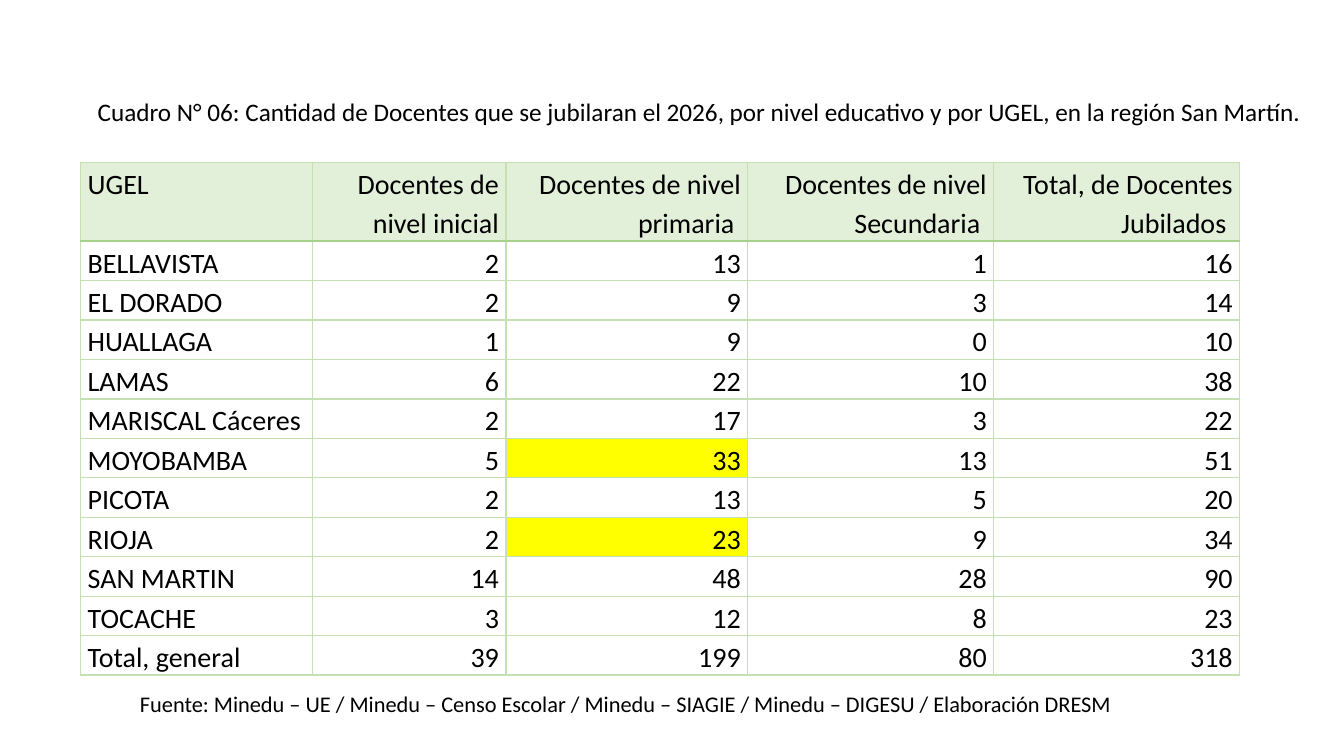
from lxml.etree import SubElement
from pptx import Presentation
from pptx.dml.color import RGBColor
from pptx.enum.text import MSO_ANCHOR, PP_ALIGN
from pptx.oxml.ns import qn
from pptx.util import Inches, Pt

HEADERS = ["UGEL", "Docentes de nivel inicial", "Docentes de nivel primaria ",
           "Docentes de nivel Secundaria ", "Total, de Docentes Jubilados "]
TEACHERS = [
    ("BELLAVISTA", 2, 13, 1, 16),
    ("EL DORADO", 2, 9, 3, 14),
    ("HUALLAGA", 1, 9, 0, 10),
    ("LAMAS", 6, 22, 10, 38),
    ("MARISCAL Cáceres", 2, 17, 3, 22),
    ("MOYOBAMBA", 5, 33, 13, 51),
    ("PICOTA", 2, 13, 5, 20),
    ("RIOJA", 2, 23, 9, 34),
    ("SAN MARTIN", 14, 48, 28, 90),
    ("TOCACHE", 3, 12, 8, 23),
    ("Total, general", 39, 199, 80, 318),
]
COLUMN_WIDTHS = [17.25, 14.4, 18, 18.3, 18.3]
HIGHLIGHTED = {("MOYOBAMBA", 2), ("RIOJA", 2)}


def rgb(value):
    return RGBColor.from_string(value)


class SlideBuilder:
    """Draws styled elements on a slide divided into 100 columns and 100 rows."""

    font = "Calibri"
    ink = "000000"
    border = "C5E0B3"
    header_rule = "A8D08D"
    header_fill = "E2EFD9"
    highlight = "FFFF00"

    def __init__(self, prs):
        self.prs = prs
        self.s = prs.slides.add_slide(prs.slide_layouts[6])

    def col(self, n):
        return round(self.prs.slide_width * n / 100)

    def row(self, n):
        return round(self.prs.slide_height * n / 100)

    def set_text(self, tf, text, size):
        tf.text = text
        p = tf.paragraphs[0]
        for r in p.runs:
            r.font.name = self.font
            r.font.size = Pt(size)
            r.font.bold = False
            r.font.color.rgb = rgb(self.ink)
        return p

    def caption(self, x, y, w, h, text, size, anchor=MSO_ANCHOR.TOP, wrap=True):
        sp = self.s.shapes.add_textbox(self.col(x), self.row(y), self.col(w), self.row(h))
        tf = sp.text_frame
        tf.word_wrap = wrap
        tf.vertical_anchor = anchor
        p = self.set_text(tf, text, size)
        p._p.get_or_add_pPr().set("indent", str(Inches(0.49)))

    def borders(self, cell, top, bottom):
        tc_pr = cell._tc.get_or_add_tcPr()
        side = (self.border, 1)
        edges = [("a:lnL", side), ("a:lnR", side), ("a:lnT", top), ("a:lnB", bottom)]
        for i, (tag, (color, width)) in enumerate(edges):
            ln = SubElement(tc_pr, qn(tag), w=str(Pt(width)))
            fill = SubElement(ln, qn("a:solidFill"))
            SubElement(fill, qn("a:srgbClr"), val=color)
            tc_pr.insert(i, ln)

    def cell(self, cell, text, is_header, is_label, fill):
        cell.margin_left = cell.margin_right = Inches(0.07)
        cell.margin_top = cell.margin_bottom = 0
        p = self.set_text(cell.text_frame, text, 20)
        p.line_spacing = 1.15
        p.alignment = PP_ALIGN.LEFT if is_label else PP_ALIGN.RIGHT
        if is_header:
            cell.vertical_anchor = MSO_ANCHOR.TOP
        else:
            cell.vertical_anchor = MSO_ANCHOR.MIDDLE if is_label else MSO_ANCHOR.BOTTOM
        if fill:
            cell.fill.solid()
            cell.fill.fore_color.rgb = rgb(fill)
        else:
            cell.fill.background()

    def table(self, x, y, widths, row_height, headers, records, highlighted):
        rows = [headers, *records]
        height = row_height * (len(rows) + 1)
        frame = self.s.shapes.add_table(len(rows), len(headers), self.col(x), self.row(y),
                                        self.col(sum(widths)), self.row(height))
        tbl = frame.table
        tbl.first_row = tbl.horz_banding = False
        for column, width in zip(tbl.columns, widths):
            column.width = self.col(width)
        thin, rule = (self.border, 1), (self.header_rule, 1.5)
        for i, values in enumerate(rows):
            tbl.rows[i].height = self.row(row_height * (2 if i == 0 else 1))
            for j, value in enumerate(values):
                marked = self.highlight if (values[0], j) in highlighted else None
                fill = self.header_fill if i == 0 else marked
                cell = tbl.cell(i, j)
                self.cell(cell, str(value), i == 0, j == 0, fill)
                self.borders(cell, rule if i == 1 else thin, rule if i == 0 else thin)


def main():
    prs = Presentation()
    prs.slide_width, prs.slide_height = Inches(13.33), Inches(7.5)
    slide = SlideBuilder(prs)
    slide.table(6, 21.47, COLUMN_WIDTHS, 5.2, HEADERS, TEACHERS, HIGHLIGHTED)
    slide.caption(2.85, 12.13, 95, 5.33,
                  "Cuadro N° 06: Cantidad de Docentes que se jubilaran el 2026, "
                  "por nivel educativo y por UGEL, en la región San Martín.",
                  18, MSO_ANCHOR.MIDDLE, wrap=False)
    slide.caption(6, 90.67, 86.25, 4.93,
                  "Fuente: Minedu – UE / Minedu – Censo Escolar / Minedu – SIAGIE / "
                  "Minedu – DIGESU / Elaboración DRESM", 16)
    prs.save("out.pptx")


if __name__ == "__main__":
    main()
